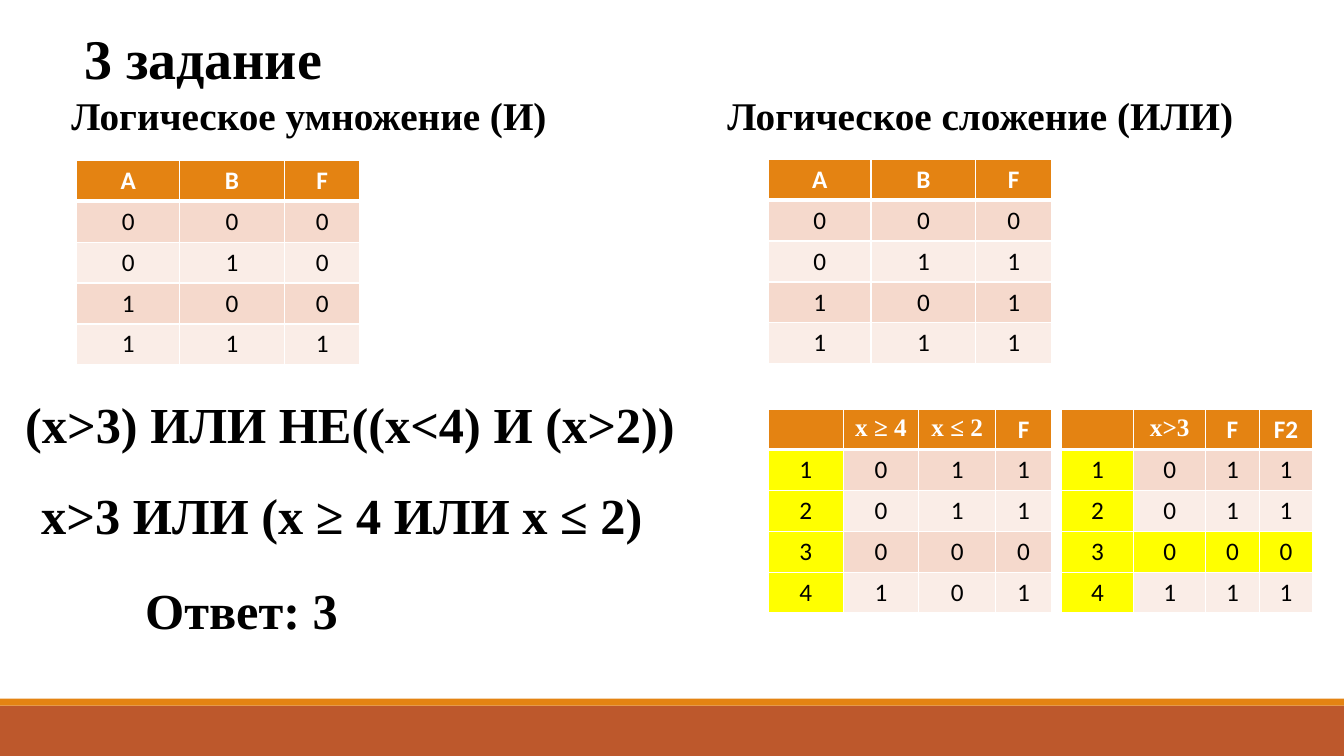
from dataclasses import dataclass

from lxml import etree
from pptx import Presentation
from pptx import util as u
from pptx.dml.color import RGBColor
from pptx.enum import shapes, text
from pptx.oxml.ns import qn

HUES = {
    "brick": "BD582C",
    "orange": "E48312",
    "rose": "F5D9CC",
    "blush": "FAEDE7",
    "yellow": "FFFF00",
    "white": "FFFFFF",
    "black": "000000",
}
SERIF = "Times New Roman"
SANS = "Calibri"
ROW = 29.2


@dataclass
class Band:
    top: float
    height: float
    hue: str


@dataclass
class Label:
    words: str
    left: float
    top: float
    width: float
    height: float
    size: float
    lead: float
    formula: bool = False
    title: bool = False


@dataclass
class Grid:
    left: float
    top: float
    cols: list[float]
    head: list[str]
    body: list[str]
    head_row: float = ROW
    keyed: bool = False
    answer: int = 0


BANDS = [Band(504, 36, "brick"), Band(499, 5, "orange")]

LABELS = [
    Label("3 задание", 44, 21, 720, 48, 40, 0.8, title=True),
    Label("Логическое сложение (ИЛИ)", 512.6, 65.5, 720, 48, 28, 0.9),
    Label("Логическое умножение (И)", 44, 65.5, 720, 48, 28, 0.9),
    Label("(x>3) ИЛИ НЕ((x<4) И (x>2))", -24.5, 274.3, 528.5, 52, 36, 1.07, True),
    Label("x>3 ИЛИ (x ≥ 4 ИЛИ x ≤ 2)", -13, 339.1, 496, 54, 36, 1.07, True),
    Label("Ответ: 3", 61.2, 406.8, 189.4, 54, 36, 1.07, True),
]

TRIO = [73.4, 74.9, 54]
GRIDS = [
    Grid(54.9, 114.6, TRIO, ["A", "B", "F"], ["000", "010", "100", "111"]),
    Grid(548.8, 113.8, TRIO, ["A", "B", "F"], ["000", "011", "101", "111"]),
    Grid(548.8, 292.3, [53.7, 53.7, 55.2, 39.6], ["", "x ≥ 4 ", "x ≤ 2", "F"],
         ["1011", "2011", "3000", "4101"], 28.4, True),
    Grid(758.3, 292.3, [51.5, 51.5, 38.2, 38.2], ["", "x>3", "F", "F2"],
         ["1011", "2011", "3000", "4111"], 28.4, True, 3),
]


def tint(hue: str) -> RGBColor:
    return RGBColor.from_string(HUES[hue])


def style(para, face: str, size: float, hue: str, bold: bool) -> None:
    font = para.font
    font.name, font.size, font.bold = face, u.Pt(size), bold
    font.color.rgb = tint(hue)


def draw_band(slide, band: Band) -> None:
    bar = slide.shapes.add_shape(
        shapes.MSO_SHAPE.RECTANGLE, 0, u.Pt(band.top), u.Pt(960), u.Pt(band.height))
    bar.shadow.inherit = False
    bar.fill.solid()
    bar.fill.fore_color.rgb = tint(band.hue)
    bar.line.fill.background()


def add_bullet(props) -> None:
    props.set("marL", str(u.Pt(7.2)))
    props.set("indent", str(u.Pt(-7.2)))
    color = etree.SubElement(props, qn("a:buClr"))
    etree.SubElement(color, qn("a:srgbClr"), val=HUES["orange"])
    etree.SubElement(props, qn("a:buFont"), typeface=SANS)
    etree.SubElement(props, qn("a:buChar"), char=" ")


def draw_label(slide, label: Label) -> None:
    box = slide.shapes.add_textbox(
        u.Pt(label.left), u.Pt(label.top), u.Pt(label.width), u.Pt(label.height))
    frame = box.text_frame
    frame.word_wrap = not label.formula
    para = frame.paragraphs[0]
    para.text = label.words
    para.line_spacing = label.lead
    props = para._p.get_or_add_pPr()
    if label.formula:
        frame.auto_size = text.MSO_AUTO_SIZE.SHAPE_TO_FIT_TEXT
        para.alignment = text.PP_ALIGN.JUSTIFY
        props.set("indent", str(u.Pt(35.4)))
    else:
        para.space_before, para.space_after = u.Pt(12), u.Pt(2)
    if label.title:
        frame.vertical_anchor = text.MSO_ANCHOR.MIDDLE
        add_bullet(props)
    style(para, SERIF, label.size, "black", True)


def edge(cell, row: int) -> None:
    props = cell._tc.get_or_add_tcPr()
    wide = {"T": 3 if row == 1 else 1, "B": 3 if row == 0 else 1}
    for spot, side in enumerate("LRTB"):
        line = etree.Element(qn(f"a:ln{side}"), w=str(u.Pt(wide.get(side, 1))))
        fill = etree.SubElement(line, qn("a:solidFill"))
        etree.SubElement(fill, qn("a:srgbClr"), val=HUES["white"])
        props.insert(spot, line)


def pick_fill(grid: Grid, row: int, col: int) -> str:
    if row == 0:
        return "orange"
    if grid.keyed and (col == 0 or row == grid.answer):
        return "yellow"
    return "rose" if row % 2 else "blush"


def draw_grid(slide, grid: Grid) -> None:
    rows = [grid.head, *grid.body]
    high = grid.head_row + ROW * len(grid.body)
    table = slide.shapes.add_table(
        len(rows), len(grid.cols), u.Pt(grid.left), u.Pt(grid.top),
        u.Pt(sum(grid.cols)), u.Pt(high)).table
    for col, width in enumerate(grid.cols):
        table.columns[col].width = u.Pt(width)
    for row, words in enumerate(rows):
        table.rows[row].height = u.Pt(ROW if row else grid.head_row)
        for col, word in enumerate(words):
            cell = table.cell(row, col)
            cell.fill.solid()
            cell.fill.fore_color.rgb = tint(pick_fill(grid, row, col))
            edge(cell, row)
            para = cell.text_frame.paragraphs[0]
            para.text = word
            para.alignment = text.PP_ALIGN.CENTER
            face = SERIF if word.startswith("x") else SANS
            style(para, face, 18, "black" if row else "white", row == 0)


def main() -> None:
    deck = Presentation()
    deck.slide_width, deck.slide_height = u.Pt(960), u.Pt(540)
    slide = deck.slides.add_slide(deck.slide_layouts[6])
    for band in BANDS:
        draw_band(slide, band)
    for label in LABELS:
        draw_label(slide, label)
    for grid in GRIDS:
        draw_grid(slide, grid)
    deck.save("out.pptx")


if __name__ == "__main__":
    main()
